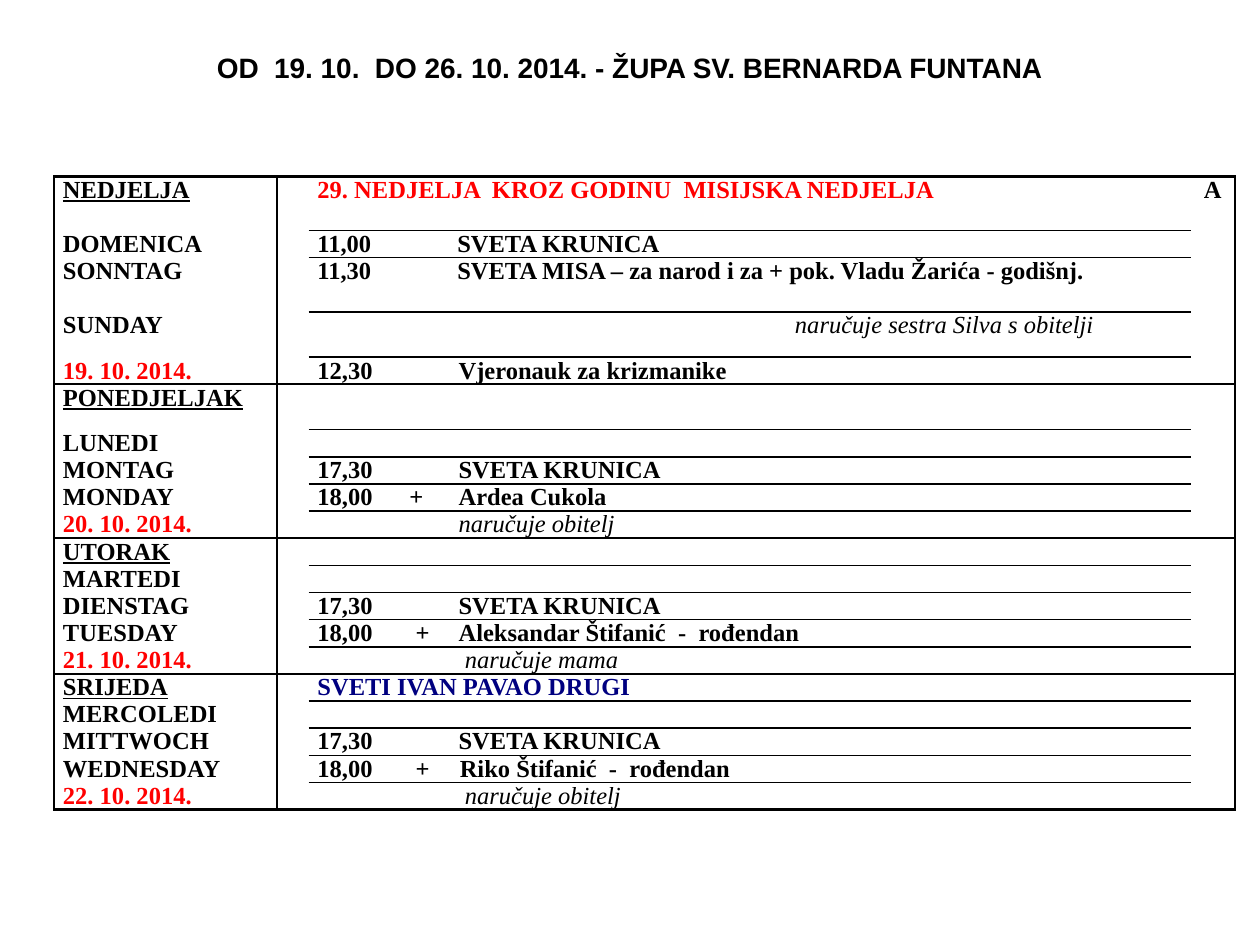
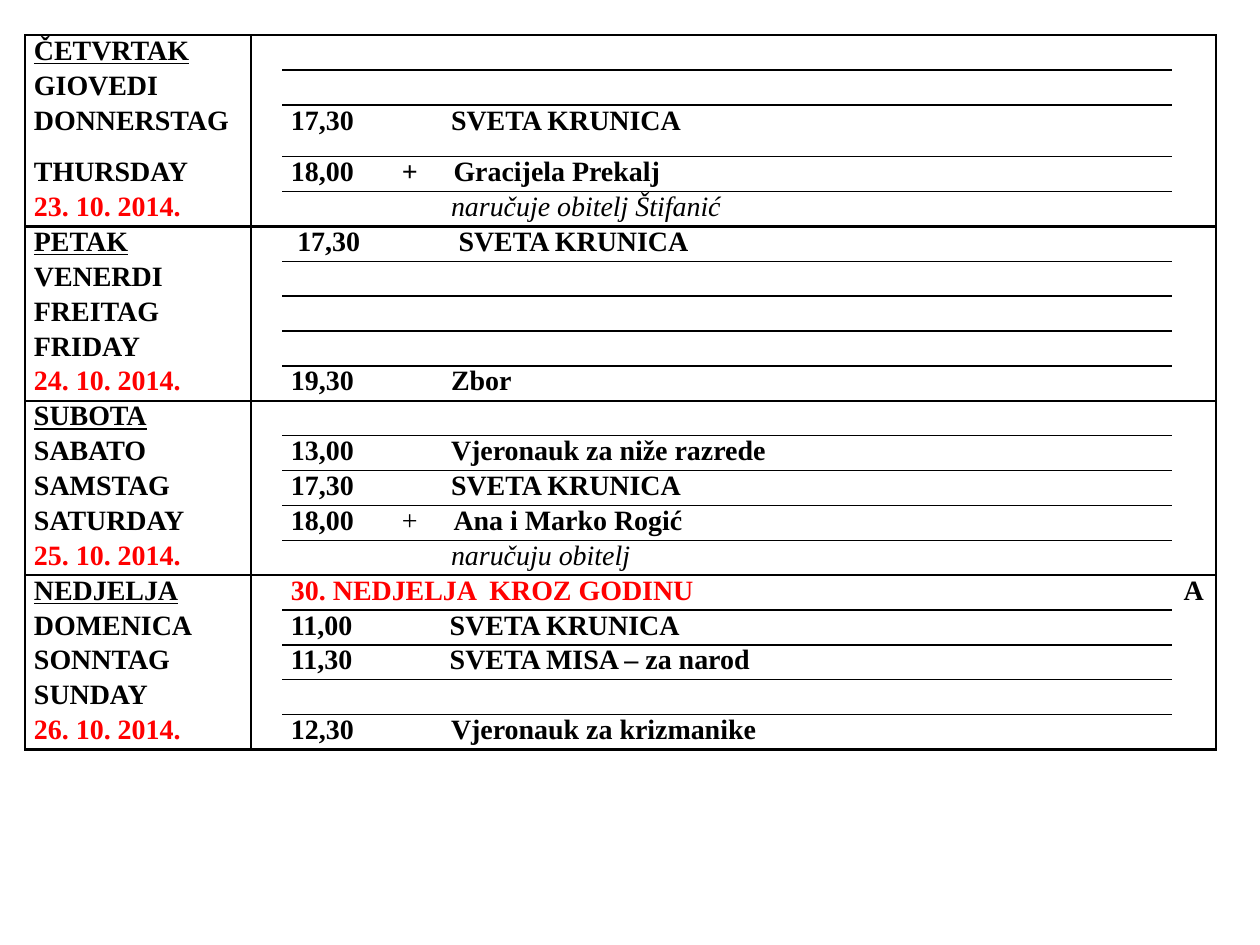
from lxml import etree
from pptx import Presentation
from pptx.dml.color import RGBColor
from pptx.enum.text import MSO_ANCHOR, MSO_AUTO_SIZE, PP_ALIGN
from pptx.oxml.ns import qn
from pptx.util import Inches, Pt

CENTER = PP_ALIGN.CENTER
TOP = MSO_ANCHOR.TOP
NO_AUTOFIT = MSO_AUTO_SIZE.NONE
TITLE_ONLY, BLANK = 5, 6

THEME = {
    "black": "000000", "white": "FFFFFF", "red": "FF0000", "navy": "000080",
    "title_font": "Arial", "table_font": "Times New Roman",
    "title_size": 16, "frame": 1.5, "rule": 1, "inset": 0.07,
}
STYLES = {
    "normal": {},
    "feast": {"color": "red"},
    "saint": {"color": "navy"},
    "request": {"bold": False, "italic": True},
}

ROSARY = "17,30\tSVETA KRUNICA"
EMPTY = ("", "normal")

first_days = [
    (["NEDJELJA", "DOMENICA", "SONNTAG", "SUNDAY", "19. 10. 2014."],
     [("29. NEDJELJA  KROZ GODINU  MISIJSKA NEDJELJA", "feast"),
      ("11,00\tSVETA KRUNICA", "normal", 1.11),
      ("11,30\tSVETA MISA – za narod i za + pok. Vladu Žarića - godišnj.", "normal", 1.11),
      ("\tnaručuje sestra Silva s obitelji", "request", 3.79),
      ("12,30\tVjeronauk za krizmanike", "normal")]),
    (["PONEDJELJAK", "LUNEDI", "MONTAG", "MONDAY", "20. 10. 2014."],
     [EMPTY, EMPTY, (ROSARY, "normal"),
      ("18,00\t+\tArdea Cukola", "normal"),
      ("\tnaručuje obitelj", "request")]),
    (["UTORAK", "MARTEDI", "DIENSTAG", "TUESDAY", "21. 10. 2014."],
     [EMPTY, EMPTY, (ROSARY, "normal"),
      ("18,00\t+\tAleksandar Štifanić  -  rođendan", "normal", 0.78, 1.12),
      ("\tnaručuje mama", "request", 1.17)]),
    (["SRIJEDA", "MERCOLEDI", "MITTWOCH", "WEDNESDAY", "22. 10. 2014."],
     [("SVETI IVAN PAVAO DRUGI", "saint"), EMPTY, (ROSARY, "normal"),
      ("18,00\t+\tRiko Štifanić  -  rođendan", "normal", 0.78, 1.13),
      ("\tnaručuje obitelj", "request", 1.17)]),
]
last_days = [
    (["ČETVRTAK", "GIOVEDI", "DONNERSTAG", "THURSDAY", "23. 10. 2014."],
     [EMPTY, EMPTY, (ROSARY, "normal"),
      ("18,00\t+\tGracijela Prekalj", "normal", 0.88, 1.29),
      ("\tnaručuje obitelj Štifanić", "request")]),
    (["PETAK", "VENERDI", "FREITAG", "FRIDAY", "24. 10. 2014."],
     [("\t" + ROSARY, "normal", 0.05, 1.33), EMPTY, EMPTY, EMPTY,
      ("19,30\tZbor", "normal")]),
    (["SUBOTA", "SABATO", "SAMSTAG", "SATURDAY", "25. 10. 2014."],
     [EMPTY, ("13,00\tVjeronauk za niže razrede", "normal"), (ROSARY, "normal"),
      ("18,00|\t+\t|Ana i Marko Rogić", "normal", 0.88, 1.29),
      ("\tnaručuju obitelj", "request")]),
    (["NEDJELJA", "DOMENICA", "SONNTAG", "SUNDAY", "26. 10. 2014."],
     [("30. NEDJELJA  KROZ GODINU", "feast"),
      ("11,00\tSVETA KRUNICA", "normal", 1.26),
      ("11,30\tSVETA MISA – za narod", "normal", 1.26), EMPTY,
      ("12,30\tVjeronauk za krizmanike", "normal")]),
]

schedules = [
    {"days": first_days, "left": 0.43, "top": 1.4, "size": 14,
     "columns": [1.77, 0.25, 7, 0.35], "height": 5.03,
     "tall_rows": {0: 0.43, 2: 0.43, 3: 0.36, 5: 0.36}, "stops": (0.73, 1.12),
     "title": "OD  19. 10.  DO 26. 10. 2014. - ŽUPA SV. BERNARDA FUNTANA"},
    {"days": last_days, "left": 0.2, "top": 0.28, "size": 16,
     "columns": [1.79, 0.25, 7.06, 0.35], "height": 5.67,
     "tall_rows": {2: 0.41}, "stops": (0.88, 1.27), "title": None},
]


def write(para, text, size, font="table_font", color="black", bold=True,
          italic=False, underline=False, stops=()):
    if stops:
        tabs = etree.SubElement(para._p.get_or_add_pPr(), qn("a:tabLst"))
        for stop in stops:
            etree.SubElement(tabs, qn("a:tab"), pos=str(Inches(stop)), algn="l")
    if not text:
        end = etree.SubElement(para._p, qn("a:endParaRPr"), sz=str(size * 100))
        etree.SubElement(end, qn("a:latin"), typeface=THEME[font])
        return
    for index, part in enumerate(text.split("|")):
        span = para.add_run()
        span.text = part
        span.font.name = THEME[font]
        span.font.size = Pt(size)
        span.font.color.rgb = RGBColor.from_string(THEME[color])
        span.font.bold = bold and index % 2 == 0
        span.font.italic = italic
        span.font.underline = underline


def draw_borders(cell, widths):
    properties = cell._tc.get_or_add_tcPr()
    for side in "LRTB":
        width = widths.get(side, 0)
        line = etree.SubElement(properties, qn("a:ln" + side), w=str(Pt(width)))
        if width:
            fill = etree.SubElement(line, qn("a:solidFill"))
            etree.SubElement(fill, qn("a:srgbClr"), val=THEME["black"])
        else:
            etree.SubElement(line, qn("a:noFill"))
    cell.fill.background()


deck = Presentation()
deck.slide_width = Inches(10)
deck.slide_height = Inches(7.5)

for schedule in schedules:
    title = schedule["title"]
    page = deck.slides.add_slide(deck.slide_layouts[TITLE_ONLY if title else BLANK])
    if title:
        box = page.shapes.title
        box.left, box.top = Inches(1.58), Inches(0.35)
        box.width, box.height = Inches(6.84), Inches(0.64)
        box.fill.solid()
        box.fill.fore_color.rgb = RGBColor.from_string(THEME["white"])
        frame = box.text_frame
        frame.auto_size = NO_AUTOFIT
        frame.vertical_anchor = TOP
        frame.margin_top = Inches(0.05)
        frame.paragraphs[0].alignment = CENTER
        write(frame.paragraphs[0], title, THEME["title_size"], font="title_font")

    size, columns, tall_rows = schedule["size"], schedule["columns"], schedule["tall_rows"]
    row_count = sum(len(names) for names, entries in schedule["days"])
    row_height = (schedule["height"] - sum(tall_rows.values())) / (row_count - len(tall_rows))
    table = page.shapes.add_table(
        row_count, len(columns), Inches(schedule["left"]), Inches(schedule["top"]),
        Inches(sum(columns)), Inches(schedule["height"])).table
    table.first_row = table.horz_banding = False
    for column, width in zip(table.columns, columns):
        column.width = Inches(width)
    for index, row in enumerate(table.rows):
        row.height = Inches(tall_rows.get(index, row_height))

    row_index = 0
    for names, entries in schedule["days"]:
        for position, (name, entry) in enumerate(zip(names, entries)):
            first, last = position == 0, position == len(names) - 1
            text, style, *stops = entry
            if not stops and "\t" in text:
                stops = schedule["stops"][-text.count("\t"):]
            contents = [
                (name, {"underline": first, "color": "red" if last else "black"}),
                ("", {}),
                (text, {**STYLES[style], "stops": stops}),
                ("A" if style == "feast" else "", {}),
            ]
            for column_index, (words, style_options) in enumerate(contents):
                cell = table.cell(row_index, column_index)
                cell.margin_left = cell.margin_right = Inches(THEME["inset"])
                cell.margin_top = cell.margin_bottom = 0
                para = cell.text_frame.paragraphs[0]
                write(para, words, size, **style_options)
                if column_index == 3:
                    para.alignment = CENTER
                inner = THEME["rule"] if column_index == 2 else 0
                widths = {"T": THEME["frame"] if first else inner,
                          "B": THEME["frame"] if last else inner}
                if column_index < 2:
                    widths["L"] = THEME["frame"]
                if column_index in (0, 3):
                    widths["R"] = THEME["frame"]
                draw_borders(cell, widths)
            row_index += 1

deck.save("out.pptx")
